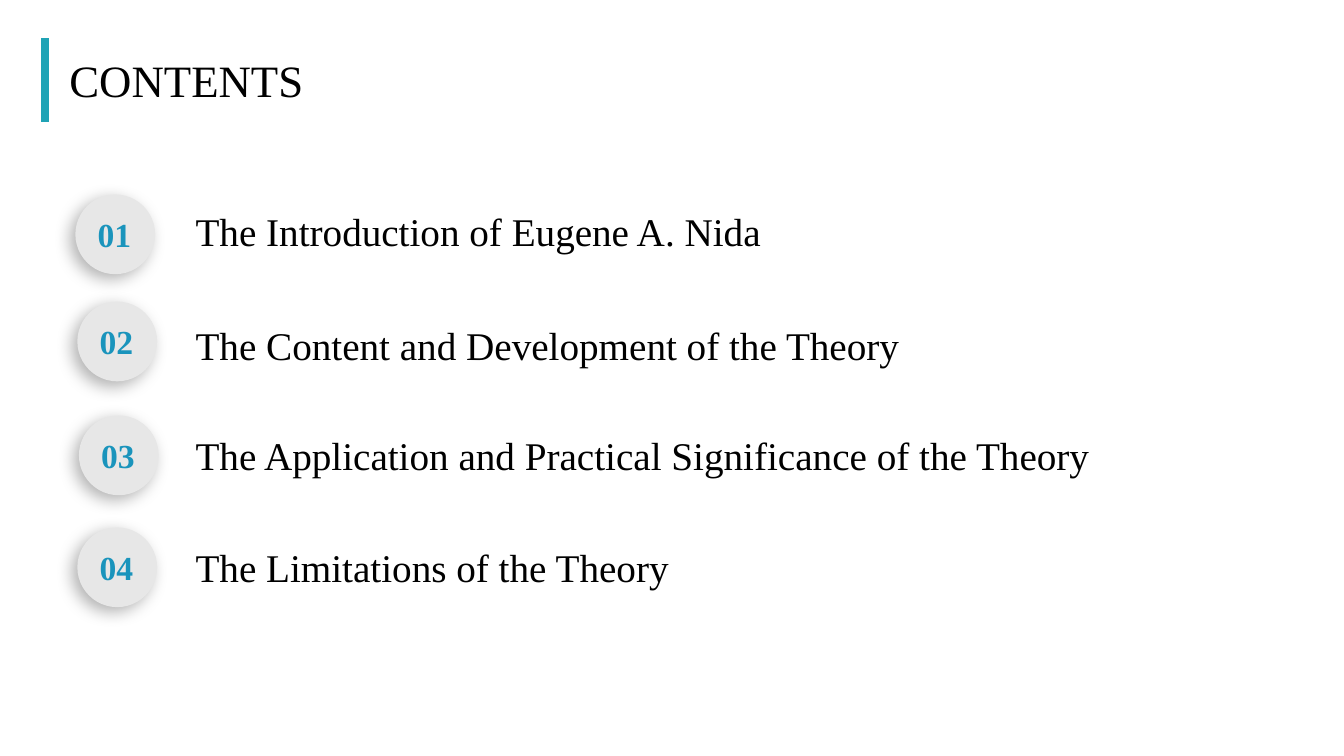
import dataclasses

import lxml.etree
import pptx
import pptx.dml.color
import pptx.enum.shapes
import pptx.enum.text
import pptx.oxml
import pptx.oxml.ns
import pptx.util

Cm = pptx.util.Cm
Pt = pptx.util.Pt

COLORS = {
    "badge": "E7E7E7",
    "number": "1A94BC",
    "accent": "1FA3B5",
    "text": "000000",
    "shadow": "000000",
}
FONT = "Times New Roman"
BADGE_SIZE = 2.01
TOPIC_LEFT = 4.53
TOPIC_HEIGHT = 1.45


@dataclasses.dataclass(frozen=True)
class Chapter:
    topic: str
    badge_left: float
    badge_top: float
    topic_top: float
    topic_width: float


CHAPTERS = [
    Chapter("The Introduction of Eugene A. Nida", 1.9, 4.9, 5.11, 15.11),
    Chapter("The Content and Development of the Theory", 1.95, 7.6, 7.98, 20.09),
    Chapter("The Application and Practical Significance of the Theory", 1.99, 10.47, 10.74, 26.92),
    Chapter("The Limitations of the Theory", 1.95, 13.29, 13.56, 14.15),
]


def color(name: str) -> pptx.dml.color.RGBColor:
    return pptx.dml.color.RGBColor.from_string(COLORS[name])


def add_label(shapes, text: str, left: float, top: float, width: float, height: float,
              size: int, ink: str = "text", bold: bool = False, wrap: bool = False):
    label = shapes.add_textbox(Cm(left), Cm(top), Cm(width), Cm(height))
    frame = label.text_frame
    frame.text = text
    frame.word_wrap = wrap
    frame.auto_size = pptx.enum.text.MSO_AUTO_SIZE.SHAPE_TO_FIT_TEXT
    font = frame.paragraphs[0].runs[0].font
    font.name = FONT
    font.size = Pt(size)
    font.bold = bold
    font.color.rgb = color(ink)
    return label


def add_soft_shadow(shape) -> None:
    shape.shadow.inherit = False
    effects = shape._element.spPr.find(pptx.oxml.ns.qn("a:effectLst"))
    effects.append(pptx.oxml.parse_xml(
        f'<a:outerShdw {pptx.oxml.ns.nsdecls("a")} blurRad="{Pt(12)}" dist="{Pt(5)}" '
        f'dir="{135 * 60000}" algn="tr" rotWithShape="0">'
        f'<a:srgbClr val="{COLORS["shadow"]}"><a:alpha val="30000"/></a:srgbClr>'
        '</a:outerShdw>'
    ))


def add_badge(slide, number: int, left: float, top: float) -> None:
    badge = slide.shapes.add_group_shape()
    disc = badge.shapes.add_shape(
        pptx.enum.shapes.MSO_SHAPE.OVAL,
        Cm(left), Cm(top), Cm(BADGE_SIZE), Cm(BADGE_SIZE),
    )
    disc.fill.solid()
    disc.fill.fore_color.rgb = color("badge")
    disc.line.fill.background()
    add_soft_shadow(disc)
    add_label(badge.shapes, f"{number:02d}", left + 0.31, top + 0.36, 1.35, 1.27,
              24, "number", bold=True)


def add_chapter(slide, number: int, chapter: Chapter) -> None:
    add_badge(slide, number, chapter.badge_left, chapter.badge_top)
    topic = add_label(slide.shapes, chapter.topic, TOPIC_LEFT, chapter.topic_top,
                      chapter.topic_width, TOPIC_HEIGHT, 28, wrap=True)
    topic.text_frame.margin_left = Cm(0.4)


def add_heading(slide) -> None:
    heading = add_label(slide.shapes, "CONTENTS", 1.2, 1.2, 7, 1.62, 32)
    heading.text_frame.paragraphs[0].alignment = pptx.enum.text.PP_ALIGN.CENTER
    accent = slide.shapes.add_connector(
        pptx.enum.shapes.MSO_CONNECTOR.STRAIGHT, Cm(1.13), Cm(0.97), Cm(1.13), Cm(3.07)
    )
    accent.line.color.rgb = color("accent")
    accent.line.width = Pt(6)
    lxml.etree.SubElement(accent._element.spPr, pptx.oxml.ns.qn("a:effectLst"))


def main() -> None:
    deck = pptx.Presentation()
    deck.slide_width = Cm(33.87)
    deck.slide_height = Cm(19.05)
    slide = deck.slides.add_slide(deck.slide_layouts[6])
    add_heading(slide)
    for number, chapter in enumerate(CHAPTERS, start=1):
        add_chapter(slide, number, chapter)
    deck.save("out.pptx")


if __name__ == "__main__":
    main()
